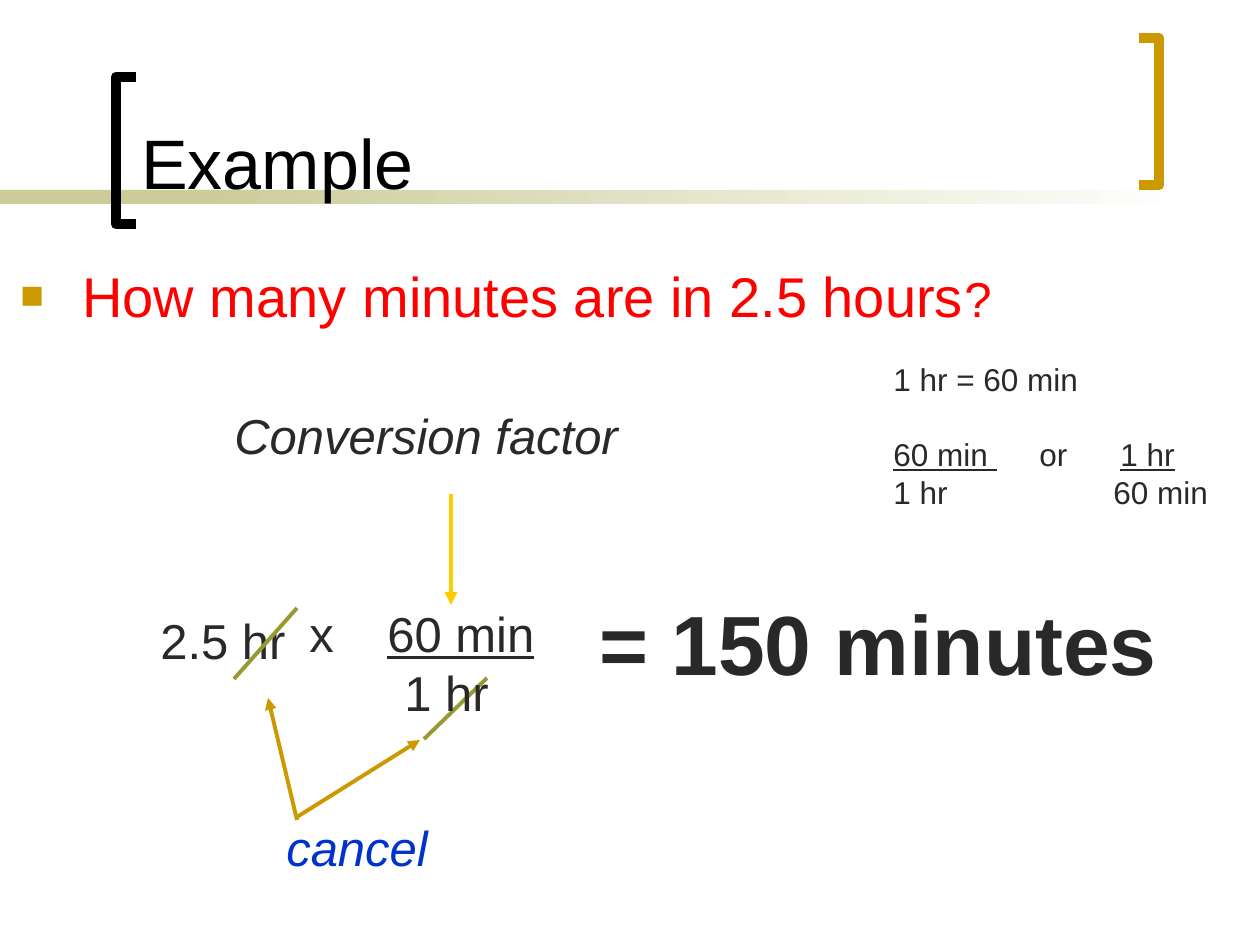
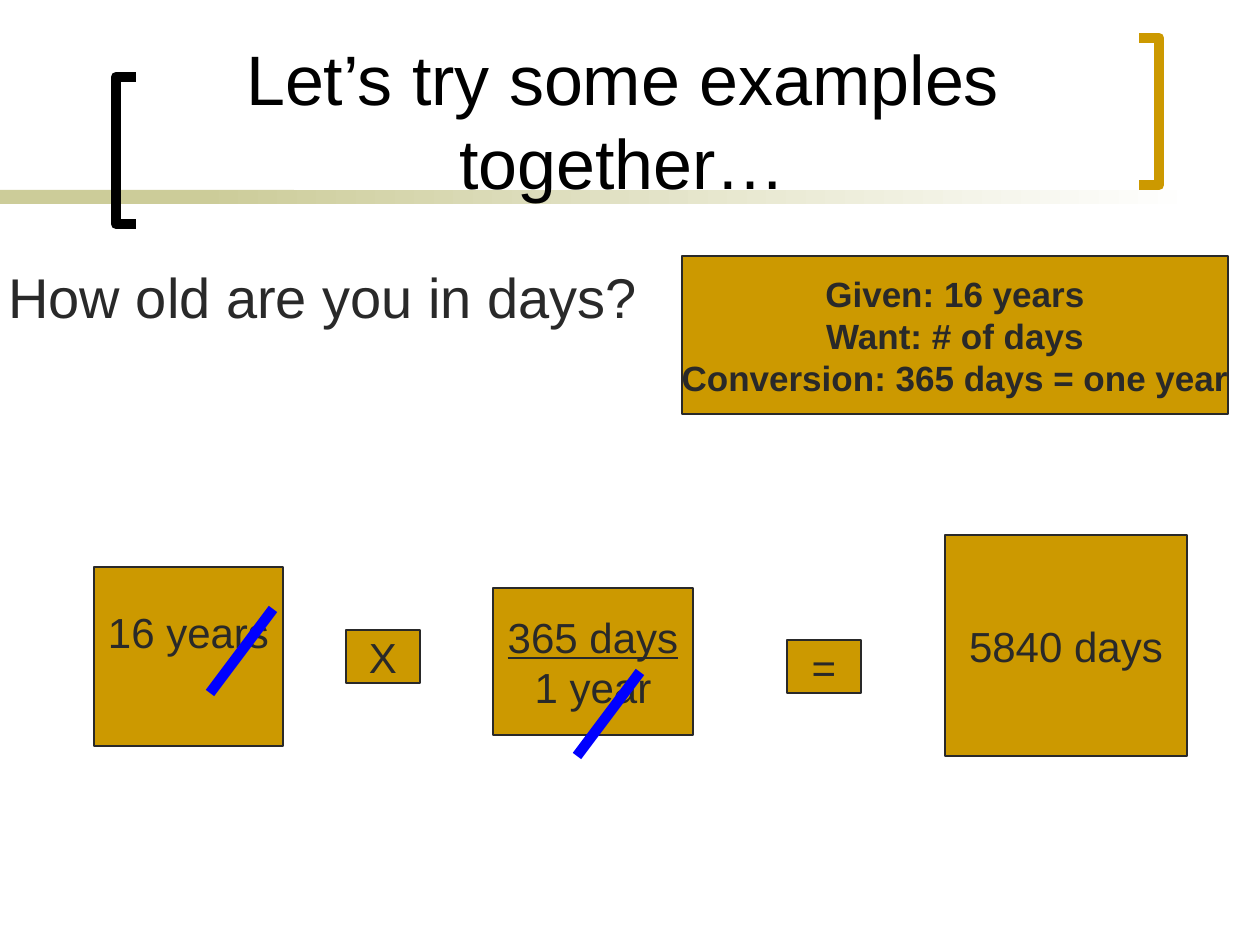
"""Build two slides of worked unit-conversion examples."""
import pptx
import pptx.dml.color
import pptx.enum.shapes
import pptx.enum.text
import pptx.oxml
import pptx.oxml.ns
import pptx.util

PX = 914400 / 126
FONT = "Arial"
COLOURS = {
    "black": "000000",
    "ink": "292929",
    "white": "FFFFFF",
    "gold": "CC9900",
    "sand": "CCCC99",
    "olive": "999933",
    "yellow": "FFCC00",
    "red": "FF0000",
    "royal": "0033CC",
    "blue": "0000FF",
}
ALIGN = pptx.enum.text.PP_ALIGN
ANCHOR = pptx.enum.text.MSO_ANCHOR
RECTANGLE = pptx.enum.shapes.MSO_SHAPE.RECTANGLE
STRAIGHT = pptx.enum.shapes.MSO_CONNECTOR.STRAIGHT


def px(length):
    """Turn whole px into EMU."""
    return pptx.util.Emu(round(length * PX))


def rgb(name):
    """Look up a named colour."""
    return pptx.dml.color.RGBColor.from_string(COLOURS[name])


def add_xml(parent, tag, content="", **attributes):
    """Append a DrawingML element to parent."""
    listed = "".join(f' {key}="{value}"' for key, value in attributes.items())
    namespace = pptx.oxml.ns.nsdecls("a")
    parent.append(pptx.oxml.parse_xml(f"<a:{tag} {namespace}{listed}>{content}</a:{tag}>"))


def write(shape, *lines, size=28, colour="ink", bold=False, italic=False, align=ALIGN.LEFT,
          anchor=ANCHOR.TOP, wrap=True, bottom=6, tabs=(), gaps=()):
    """Fill shape with lines, each a string or a list of (text, format) runs."""
    frame = shape.text_frame
    frame.word_wrap = wrap
    frame.vertical_anchor = anchor
    frame.margin_bottom = px(bottom)
    for index, line in enumerate(lines):
        paragraph = frame.paragraphs[0] if index == 0 else frame.add_paragraph()
        paragraph.alignment = align
        if index < len(gaps):
            paragraph.space_before = pptx.util.Pt(gaps[index])
        if index < len(tabs):
            stops = "".join(f'<a:tab pos="{px(stop)}" algn="l"/>' for stop in tabs[index])
            add_xml(paragraph._p.get_or_add_pPr(), "tabLst", stops)
        for text, style in [(line, {})] if isinstance(line, str) else line:
            run = paragraph.add_run()
            run.text = text
            font = run.font
            font.name = FONT
            font.size = pptx.util.Pt(style.get("size", size))
            font.color.rgb = rgb(colour)
            font.bold, font.italic = bold, italic
            font.underline = style.get("underline", False)


def text_box(slide, box, *lines, **style):
    """Add a text box at box (left, top, width, height)."""
    label = slide.shapes.add_textbox(*map(px, box))
    write(label, *lines, **style)
    return label


def rectangle(slide, box, fill):
    """Add a plain filled rectangle."""
    shape = slide.shapes.add_shape(RECTANGLE, *map(px, box))
    shape.shadow.inherit = False
    shape.fill.solid()
    shape.fill.fore_color.rgb = rgb(fill)
    shape.line.fill.background()
    return shape


def card(slide, box, *lines, size=24, **style):
    """Add an outlined gold card with centred text."""
    shape = rectangle(slide, box, "gold")
    shape.line.color.rgb = rgb("ink")
    shape.line.width = pptx.util.Pt(0.75)
    write(shape, *lines, size=size, align=ALIGN.CENTER, anchor=ANCHOR.MIDDLE, wrap=False, **style)


def stroke(slide, start, end, colour, width=2.25, arrow=False):
    """Draw a straight line, with an arrowhead at its end if wanted."""
    line = slide.shapes.add_connector(STRAIGHT, *map(px, start + end))
    line.line.color.rgb = rgb(colour)
    line.line.width = pptx.util.Pt(width)
    if arrow:
        add_xml(line.line._get_or_add_ln(), "tailEnd", type="triangle")
    add_xml(line._element.spPr, "effectLst")


def bracket(slide, spine, tip, top, colour):
    """Draw a square bracket whose ends point from spine to tip."""
    base = top + 147
    builder = slide.shapes.build_freeform(tip, top, scale=PX)
    builder.add_line_segments([(spine, top), (spine, base), (tip, base)], close=False)
    shape = builder.convert_to_shape()
    shape.shadow.inherit = False
    shape.fill.background()
    shape.line.color.rgb = rgb(colour)
    shape.line.width = pptx.util.Pt(6)


def titled_slide(deck, title, align=ALIGN.LEFT):
    """Add a blank slide with the fading band, brackets and title."""
    slide = deck.slides.add_slide(deck.slide_layouts[6])
    rectangle(slide, (0, 190, 294, 14), "sand")
    fade = rectangle(slide, (199, 190, 998, 14), "sand").fill
    fade.gradient()
    fade.gradient_angle = 0
    for stop, colour, position in zip(fade.gradient_stops, ("sand", "white"), (0, 1)):
        stop.color.rgb = rgb(colour)
        stop.position = position
    bracket(slide, 116, 136, 77, "black")
    bracket(slide, 1159, 1139, 38, "gold")
    text_box(slide, (129, 14, 987, 195), title, size=40, colour="black", align=align,
             anchor=ANCHOR.BOTTOM)
    return slide


def add_bullet(label, indent):
    """Give the first paragraph a hanging gold square bullet."""
    properties = label.text_frame.paragraphs[0]._p.get_or_add_pPr()
    properties.set("marL", str(px(indent)))
    properties.set("indent", str(px(-indent)))
    add_xml(properties, "buClr", f'<a:srgbClr val="{COLOURS["gold"]}"/>')
    add_xml(properties, "buSzPct", val="70000")
    add_xml(properties, "buFont", typeface=FONT)
    add_xml(properties, "buChar", char="■")


def hours_slide(deck):
    """Convert hours to minutes."""
    slide = titled_slide(deck, "Example")
    under = {"underline": True}
    question = text_box(slide, (8, 255, 1056, 84),
                        [("How many minutes are in 2.5 hours", {}), ("?", {"size": 28})],
                        size=32, colour="red")
    add_bullet(question, 62)
    text_box(slide, (222, 399, 440, 69), "Conversion factor", italic=True)
    text_box(slide, (148, 604, 160, 69), "2.5 hr")
    text_box(slide, (274, 811, 190, 69), "cancel", colour="royal", italic=True)
    stroke(slide, (297, 608), (234, 679), "olive")
    stroke(slide, (487, 678), (424, 739), "olive")
    stroke(slide, (297, 820), (268, 698), "gold", arrow=True)
    stroke(slide, (297, 817), (420, 740), "gold", arrow=True)
    stroke(slide, (451, 494), (451, 605), "yellow", width=2.5, arrow=True)
    text_box(slide, (881, 354, 367, 165),
             "1 hr = 60 min",
             [("60 min ", under), ("\tor\t", {}), ("\t1 hr\t", under)],
             "1 hr\t60 min",
             size=18, tabs=[(), (146, 210, 227, 316), (220,)], gaps=(0, 21))
    text_box(slide, (297, 597, 270, 131),
             [("x\t", {}), ("\t60 min", under)], "\t1 hr", tabs=[(51, 78), (95,)])
    text_box(slide, (587, 585, 590, 115), "= 150 minutes", size=48, bold=True, wrap=False)


def age_slide(deck):
    """Convert an age in years to days."""
    slide = titled_slide(deck, "Let’s try some examples together…", ALIGN.CENTER)
    text_box(slide, (-4, 256, 668, 84), "How old are you in days?", size=32)
    card(slide, (682, 256, 546, 158), "Given: 16 years", "Want: # of days",
         "Conversion: 365 days = one year", size=20, bold=True)
    card(slide, (94, 567, 189, 179), "16 years", bottom=56)
    card(slide, (346, 630, 74, 53), "X")
    card(slide, (493, 588, 200, 147), [("365 days", {"underline": True})], "1 year")
    card(slide, (787, 640, 74, 53), "=")
    card(slide, (945, 535, 242, 221), "5840 days")
    for left, bottom in ((210, 693), (577, 756)):
        stroke(slide, (left, bottom), (left + 63, bottom - 84), "blue", width=6)


def main():
    """Build and save the deck."""
    deck = pptx.Presentation()
    deck.slide_width, deck.slide_height = px(1260), px(945)
    hours_slide(deck)
    age_slide(deck)
    deck.save("out.pptx")


if __name__ == "__main__":
    main()
